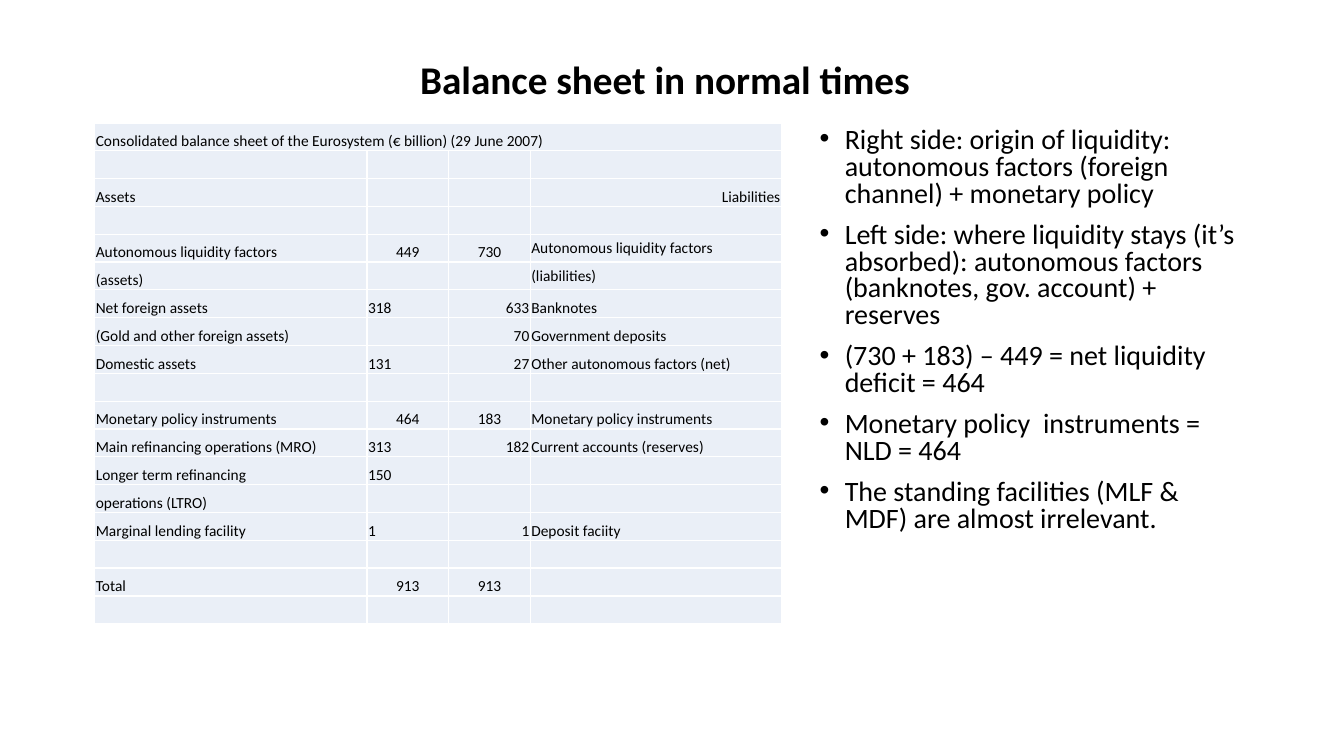
from lxml.etree import SubElement
from pptx import Presentation
from pptx.dml.color import RGBColor
from pptx.enum.text import MSO_ANCHOR, PP_ALIGN
from pptx.oxml.ns import qn
from pptx.util import Inches, Pt

COLORS = {"text": "000000", "cell": "EAEFF7", "line": "FFFFFF"}
FONT = "Calibri"
WIDTHS = [2.7, 0.81, 0.81, 2.49]
SUMS = {"Autonomous liquidity factors", "Monetary policy instruments", "Total"}
EMPTY = ("", "", "", "")
ROWS = [
    ("Consolidated balance sheet of the Eurosystem (€ billion) (29 June 2007)", "", "", ""),
    EMPTY,
    ("Assets", "", "", "Liabilities"),
    EMPTY,
    ("Autonomous liquidity factors", "449", "730", "Autonomous liquidity factors"),
    ("(assets)", "", "", "(liabilities)"),
    ("Net foreign assets", "318", "633", "Banknotes"),
    ("(Gold and other foreign assets)", "", "70", "Government deposits"),
    ("Domestic assets", "131", "27", "Other autonomous factors (net)"),
    EMPTY,
    ("Monetary policy instruments", "464", "183", "Monetary policy instruments"),
    ("Main refinancing operations (MRO)", "313", "182", "Current accounts (reserves)"),
    ("Longer term refinancing", "150", "", ""),
    ("operations (LTRO)", "", "", ""),
    ("Marginal lending facility", "1", "1", "Deposit faciity"),
    EMPTY,
    ("Total", "913", "913", ""),
    EMPTY,
]
POINTS = [
    "Right side: origin of liquidity: autonomous factors (foreign channel) + monetary policy",
    "Left side: where liquidity stays (it’s absorbed): autonomous factors "
    "(banknotes, gov. account) + reserves",
    "(730 + 183) – 449 = net liquidity deficit = 464",
    "Monetary policy  instruments = NLD = 464",
    "The standing facilities (MLF & MDF) are almost irrelevant.",
]


def add_run(para, text, size, bold=False):
    """Add one styled run to a paragraph."""
    run = para.add_run()
    run.text = text
    run.font.name, run.font.size, run.font.bold = FONT, Pt(size), bold
    run.font.color.rgb = RGBColor.from_string(COLORS["text"])


def add_box(slide, left, top, width, height, anchor):
    """Add a wrapping text box and return its frame."""
    box = slide.shapes.add_textbox(Inches(left), Inches(top), Inches(width), Inches(height))
    frame = box.text_frame
    frame.word_wrap = True
    frame.vertical_anchor = anchor
    return frame


def add_title(slide, text):
    """Add the centred slide title."""
    para = add_box(slide, 0.92, 0.4, 11.35, 0.82, MSO_ANCHOR.MIDDLE).paragraphs[0]
    para.alignment = PP_ALIGN.CENTER
    para.line_spacing = 0.9
    add_run(para, text, 28, True)


def add_list(slide, points):
    """Add the bulleted notes beside the table."""
    frame = add_box(slide, 8.03, 1.22, 4.39, 4.55, MSO_ANCHOR.TOP)
    for num, text in enumerate(points):
        para = frame.add_paragraph() if num else frame.paragraphs[0]
        para.line_spacing = 0.8
        para.space_before = Pt(10)
        props = para._p.get_or_add_pPr()
        props.set("marL", str(Inches(0.25)))
        props.set("indent", str(Inches(-0.25)))
        SubElement(props, qn("a:buFont"), typeface="Arial")
        SubElement(props, qn("a:buChar"), char="•")
        add_run(para, text, 20)


def align(row, col):
    """Return the alignment of a table cell."""
    if col in (1, 2) and row[0] in SUMS:
        return PP_ALIGN.CENTER
    if col == 2 or row[col] == "Liabilities":
        return PP_ALIGN.RIGHT
    return PP_ALIGN.LEFT


def add_edges(cell):
    """Draw thin lines on all four sides of a cell."""
    props = cell._tc.get_or_add_tcPr()
    for spot, side in enumerate(("lnL", "lnR", "lnT", "lnB")):
        line = SubElement(props, qn(f"a:{side}"), w=str(Pt(1)))
        fill = SubElement(line, qn("a:solidFill"))
        SubElement(fill, qn("a:srgbClr"), val=COLORS["line"])
        props.insert(spot, line)


def fill_cell(cell, text, side, anchor):
    """Style one cell and write its text."""
    cell.fill.solid()
    cell.fill.fore_color.rgb = RGBColor.from_string(COLORS["cell"])
    add_edges(cell)
    cell.margin_left = cell.margin_right = cell.margin_top = Inches(0.01)
    cell.margin_bottom = 0
    cell.vertical_anchor = anchor
    para = cell.text_frame.paragraphs[0]
    para.alignment = side
    if text:
        add_run(para, text, 11)
    else:
        SubElement(para._p, qn("a:endParaRPr"), sz="1100")


def add_sheet(slide, rows):
    """Add the balance sheet table."""
    width, height = Inches(sum(WIDTHS)), Inches(4.97)
    table = slide.shapes.add_table(
        len(rows), len(WIDTHS), Inches(0.94), Inches(1.22), width, height).table
    table.first_row = table.horz_banding = False
    for col, size in zip(table.columns, WIDTHS):
        col.width = Inches(size)
    for top, row in enumerate(rows):
        table.rows[top].height = height // len(rows)
        for col, text in enumerate(row):
            mid = col == 3 and top in (4, 5)
            anchor = MSO_ANCHOR.MIDDLE if mid else MSO_ANCHOR.BOTTOM
            fill_cell(table.cell(top, col), text, align(row, col), anchor)
    table.cell(0, 0).merge(table.cell(0, 3))


def main():
    """Build and save the slide."""
    deck = Presentation()
    deck.slide_width, deck.slide_height = Inches(13.33), Inches(7.5)
    slide = deck.slides.add_slide(deck.slide_layouts[6])
    add_title(slide, "Balance sheet in normal times")
    add_sheet(slide, ROWS)
    add_list(slide, POINTS)
    deck.save("out.pptx")


if __name__ == "__main__":
    main()
